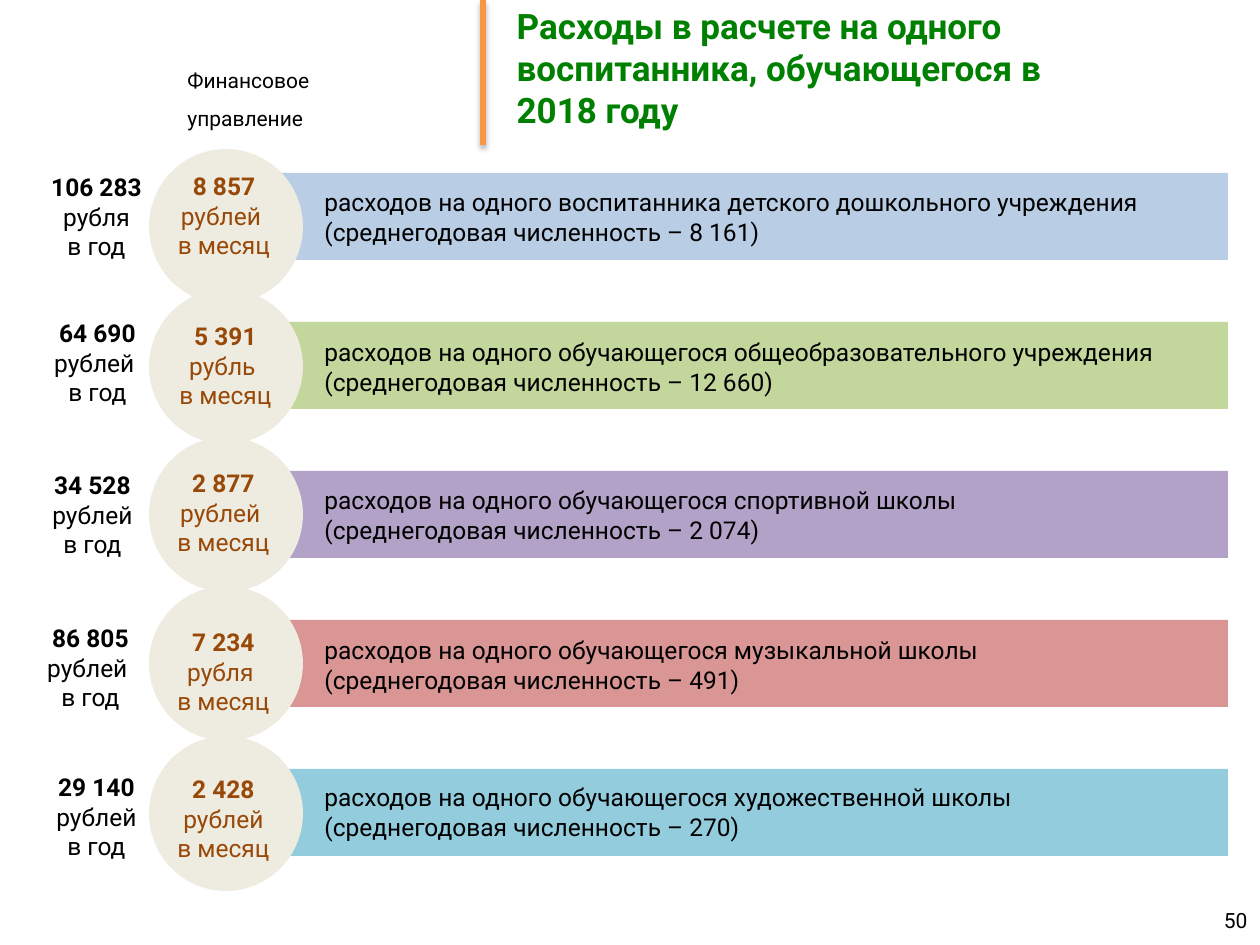
from dataclasses import dataclass

from lxml import etree
from pptx import Presentation
from pptx.dml.color import RGBColor
from pptx.enum.shapes import MSO_CONNECTOR, MSO_SHAPE
from pptx.enum.text import MSO_ANCHOR, MSO_AUTO_SIZE, PP_ALIGN
from pptx.oxml import parse_xml
from pptx.oxml.ns import nsdecls
from pptx.util import Emu, Pt

LEFT, CENTER, RIGHT = PP_ALIGN.LEFT, PP_ALIGN.CENTER, PP_ALIGN.RIGHT
TOP, MIDDLE = MSO_ANCHOR.TOP, MSO_ANCHOR.MIDDLE
RECTANGLE, OVAL = MSO_SHAPE.RECTANGLE, MSO_SHAPE.OVAL
STRAIGHT = MSO_CONNECTOR.STRAIGHT
NO_AUTOFIT = MSO_AUTO_SIZE.NONE

EMU_PER_PX = 914400 / 126
FONT = "Roboto"
BLACK = RGBColor(0x00, 0x00, 0x00)
GREEN = RGBColor(0x00, 0x80, 0x00)
BROWN = RGBColor(0x98, 0x48, 0x07)
ORANGE = RGBColor(0xF7, 0x96, 0x46)
CREAM = RGBColor(0xEE, 0xEC, 0xE1)
BLUE_BAR = RGBColor(0xB9, 0xCD, 0xE5)
GREEN_BAR = RGBColor(0xC3, 0xD6, 0x9B)
PURPLE_BAR = RGBColor(0xB3, 0xA2, 0xC7)
RED_BAR = RGBColor(0xD9, 0x96, 0x94)
TEAL_BAR = RGBColor(0x93, 0xCD, 0xDD)

BAR_TOP, BAR_PITCH = 173, 149
AMOUNT_HEIGHT = 102


@dataclass
class Expense:
    bar_color: RGBColor
    circle_top: int
    yearly: tuple
    yearly_box: tuple
    monthly: tuple
    monthly_box: tuple
    description: tuple
    description_top: int


EXPENSES = [
    Expense(BLUE_BAR, 149,
            ("106 283", "рубля", "в год"), (29, 166, 135),
            ("8 857", "рублей ", "в месяц"), (152, 165, 144),
            ("расходов на одного воспитанника детского дошкольного учреждения "
             "(среднегодовая численность – 8 161)",), 181),
    Expense(GREEN_BAR, 289,
            ("64 690", "рублей ", "в год"), (33, 312, 129),
            ("5 391", "рубль ", "в месяц"), (161, 315, 129),
            ("расходов на одного обучающегося общеобразовательного учреждения "
             "(среднегодовая численность – 12 660)",), 331),
    Expense(PURPLE_BAR, 437,
            ("34 528", "рублей", "в год"), (28, 464, 129),
            ("2 877", "рублей ", "в месяц"), (159, 462, 129),
            ("расходов на одного обучающегося спортивной школы",
             "(среднегодовая численность – 2 074)"), 479),
    Expense(RED_BAR, 586,
            ("86 805", "рублей ", "в год"), (26, 617, 129),
            ("7 234", "рубля ", "в месяц"), (159, 621, 129),
            ("расходов на одного обучающегося музыкальной школы",
             "(среднегодовая численность – 491)"), 629),
    Expense(TEAL_BAR, 736,
            ("29 140", "рублей", "в год"), (32, 766, 129),
            ("2 428", "рублей", "в месяц"), (159, 768, 129),
            ("расходов на одного обучающегося художественной школы",
             "(среднегодовая численность – 270)"), 776),
]


def px(length):
    return Emu(round(length * EMU_PER_PX))


def write(shape, lines, size=14, color=BLACK, bold_lines=0, align=LEFT,
          anchor=TOP, line_spacing=None, wrap=True):
    frame = shape.text_frame
    frame.auto_size = NO_AUTOFIT
    frame.word_wrap = wrap
    frame.vertical_anchor = anchor
    frame.text = "\n".join(lines)
    for index, paragraph in enumerate(frame.paragraphs):
        paragraph.alignment = align
        paragraph.line_spacing = line_spacing
        for run in paragraph.runs:
            run.font.name = FONT
            run.font.size = Pt(size)
            run.font.color.rgb = color
            run.font.bold = index < bold_lines


def add_text(slide, left, top, width, height, lines, **text_format):
    box = slide.shapes.add_textbox(px(left), px(top), px(width), px(height))
    write(box, lines, **text_format)


def add_filled(slide, kind, left, top, width, height, color):
    shape = slide.shapes.add_shape(kind, px(left), px(top), px(width), px(height))
    shape.shadow.inherit = False
    shape.fill.solid()
    shape.fill.fore_color.rgb = color
    shape.line.fill.background()


def add_amount(slide, box, lines, color):
    left, top, width = box
    add_text(slide, left, top, width, AMOUNT_HEIGHT, lines,
             color=color, bold_lines=1, align=CENTER)


def add_divider(slide):
    divider = slide.shapes.add_connector(STRAIGHT, px(483), 0, px(483), px(145))
    divider.line.color.rgb = ORANGE
    divider.line.width = Pt(3)
    effects = parse_xml(f"<a:effectLst {nsdecls('a')}/>")
    shadow = etree.SubElement(
        effects, effects.tag.replace("effectLst", "outerShdw"),
        blurRad=str(Pt(3.1)), dist=str(Pt(1.8)), dir="5400000", rotWithShape="0")
    tint = etree.SubElement(
        shadow, effects.tag.replace("effectLst", "srgbClr"), val="000000")
    etree.SubElement(
        tint, effects.tag.replace("effectLst", "alpha"), val="35000")
    divider.element.spPr.append(effects)


def set_title(slide):
    title = slide.shapes.title
    title.left, title.top, title.width, title.height = map(px, (504, 4, 615, 127))
    write(title, ["Расходы в расчете на одного воспитанника, обучающегося в 2018 году"],
          size=20, color=GREEN, bold_lines=1, anchor=MIDDLE)


def add_expense_bar(slide, index, expense):
    add_filled(slide, RECTANGLE, 272, BAR_TOP + index * BAR_PITCH, 956, 87,
               expense.bar_color)
    add_amount(slide, expense.yearly_box, expense.yearly, BLACK)
    add_text(slide, 312, expense.description_top, 920, 72, expense.description)


def main():
    presentation = Presentation()
    presentation.slide_width, presentation.slide_height = px(1260), px(945)
    slide = presentation.slides.add_slide(presentation.slide_layouts[5])

    add_text(slide, 175, 49, 265, 45, ["Финансовое\vуправление"],
             size=12, line_spacing=1.5, wrap=False)
    add_divider(slide)
    set_title(slide)
    for index, expense in enumerate(EXPENSES):
        add_expense_bar(slide, index, expense)
    add_text(slide, 966, 895, 294, 50, ["50"], size=12, align=RIGHT, anchor=MIDDLE)
    for expense in EXPENSES:
        add_filled(slide, OVAL, 149, expense.circle_top, 154, 155, CREAM)
    for expense in EXPENSES:
        add_amount(slide, expense.monthly_box, expense.monthly, BROWN)

    presentation.save("out.pptx")


if __name__ == "__main__":
    main()
